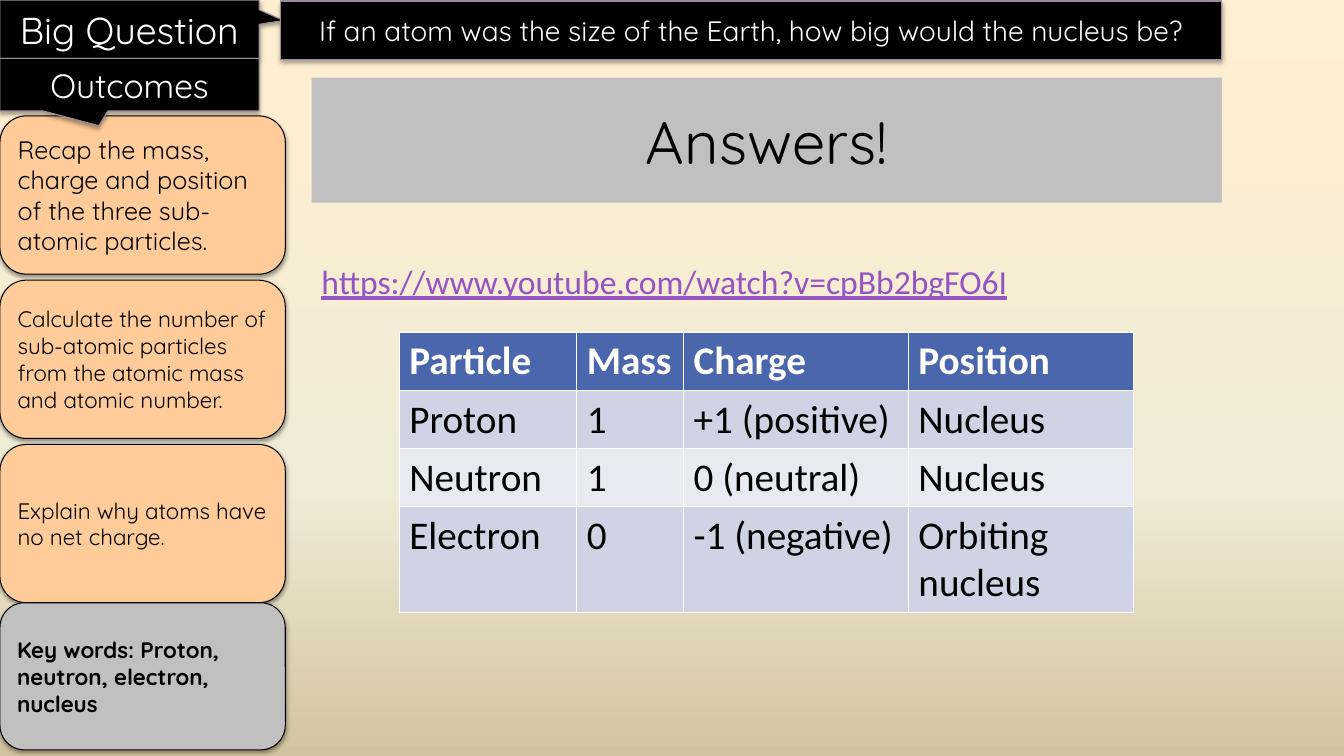
from lxml import etree
from pptx import Presentation
from pptx.dml.color import RGBColor
from pptx.enum.shapes import MSO_SHAPE
from pptx.enum.text import MSO_ANCHOR, PP_ALIGN
from pptx.oxml.ns import qn
from pptx.util import Inches, Pt

RECT, ROUNDED, CALLOUT = MSO_SHAPE.RECTANGLE, MSO_SHAPE.ROUNDED_RECTANGLE, MSO_SHAPE.RECTANGULAR_CALLOUT
LEFT, CENTER, MIDDLE = PP_ALIGN.LEFT, PP_ALIGN.CENTER, MSO_ANCHOR.MIDDLE
COLORS = {
    "black": "000000", "white": "FFFFFF", "edge": "9A8C9D", "peach": "FFCC99",
    "grey": "C0C0C0", "link": "9454C3", "header": "4A66AC", "band_dark": "D0D3E3",
    "band_light": "E9EAF1", "sky": "FFEFD1", "cream": "F0EBD5", "sand": "D1C39F",
}


def style_text(paragraph, size, color, font="Quicksand", bold=False, align=LEFT):
    paragraph.alignment = align
    run_font = paragraph.runs[0].font
    run_font.name, run_font.size, run_font.bold = font, Pt(size), bold
    run_font.color.rgb = RGBColor.from_string(COLORS[color])
    return run_font


def add_panel(kind, box, text, size, fill, color="black", align=LEFT, edge=None, shadow=None, bold=False):
    panel = slide.shapes.add_shape(kind, *[Inches(length) for length in box])
    panel.shadow.inherit = False
    panel.fill.solid()
    panel.fill.fore_color.rgb = RGBColor.from_string(COLORS[fill])
    if edge:
        panel.line.color.rgb = RGBColor.from_string(COLORS[edge])
        panel.line.width = Pt(0.75)
    else:
        panel.line.fill.background()
    if shadow:
        opacity, distance = shadow
        effects = panel._element.spPr.find(qn("a:effectLst"))
        outer = etree.SubElement(effects, qn("a:outerShdw"), blurRad=str(Pt(3.1)),
                                 dist=str(Pt(distance)), dir="5400000", rotWithShape="0")
        tint = etree.SubElement(outer, qn("a:srgbClr"), val=COLORS["black"])
        etree.SubElement(tint, qn("a:alpha"), val=str(opacity * 1000))
    panel.text_frame.text = text
    panel.text_frame.word_wrap = True
    panel.text_frame.vertical_anchor = MIDDLE
    style_text(panel.text_frame.paragraphs[0], size, color, bold=bold, align=align)
    return panel


prs = Presentation()
prs.slide_width, prs.slide_height = Inches(13.33), Inches(7.5)
slide = prs.slides.add_slide(prs.slide_layouts[6])

backdrop = slide.background.fill
backdrop.gradient()
backdrop.gradient_angle = 270
stops = slide.element.find(".//" + qn("a:gsLst"))
stops.clear()
for percent, shade in [(0, "sky"), (65, "cream"), (100, "sand")]:
    stop = etree.SubElement(stops, qn("a:gs"), pos=str(percent * 1000))
    etree.SubElement(stop, qn("a:srgbClr"), val=COLORS[shade])

banner = dict(fill="black", color="white", align=CENTER, edge="edge", shadow=(35, 1.8))
card = dict(edge="black", shadow=(38, 1.6))

big_question = add_panel(CALLOUT, (0, 0, 2.57, 0.58), "Big Question", 26.7, **banner)
big_question.adjustments[0], big_question.adjustments[1] = 0.593, -0.15
add_panel(RECT, (2.78, 0.01, 9.34, 0.58),
          "If an atom was the size of the Earth, how big would the nucleus be?", 20, **banner)

outcomes = [
    ("Recap the mass, charge and position of the three sub-atomic particles.", 18),
    ("Calculate the number of sub-atomic particles from the atomic mass and atomic number.", 16),
    ("Explain why atoms have no net charge.", 16),
]
for index, (outcome, size) in enumerate(outcomes):
    add_panel(ROUNDED, (0, 1.15 + index * 1.63, 2.83, 1.57), outcome, size, "peach", **card)
add_panel(ROUNDED, (0, 5.98, 2.83, 1.46), "Key words: Proton, neutron, electron, nucleus",
          16, "grey", bold=True, **card)

outcomes_heading = add_panel(CALLOUT, (0, 0.58, 2.57, 0.52), "Outcomes", 24, **banner)
outcomes_heading.adjustments[0], outcomes_heading.adjustments[1] = -0.118, 0.783

particles = [
    ("Particle", "Mass", "Charge", "Position"),
    ("Proton", "1", "+1 (positive)", "Nucleus"),
    ("Neutron", "1", "0 (neutral)", "Nucleus"),
    ("Electron", "0", "-1 (negative)", "Orbiting nucleus"),
]
row_fills = ["header", "band_dark", "band_light", "band_dark"]
particle_table = slide.shapes.add_table(4, 4, Inches(3.96), Inches(3.3), Inches(7.28), Inches(2.73)).table
for column, width in zip(particle_table.columns, [1.76, 1.06, 2.23, 2.23]):
    column.width = Inches(width)
for row, height in zip(particle_table.rows, [0.57, 0.57, 0.57, 1.02]):
    row.height = Inches(height)
for r, values in enumerate(particles):
    for c, value in enumerate(values):
        cell = particle_table.cell(r, c)
        cell.text = value
        cell.fill.solid()
        cell.fill.fore_color.rgb = RGBColor.from_string(COLORS[row_fills[r]])
        style_text(cell.text_frame.paragraphs[0], 28, "white" if r == 0 else "black", "Calibri", r == 0)

add_panel(RECT, (3.09, 0.77, 9.03, 1.24), "Answers!", 42.7, "grey", align=CENTER)

video_address = slide.shapes.add_textbox(Inches(3.09), Inches(2.54), Inches(7.07), Inches(0.5)).text_frame
video_address.text = "https://www.youtube.com/watch?v=cpBb2bgFO6I"
style_text(video_address.paragraphs[0], 24, "link", "Calibri").underline = True

prs.save("out.pptx")
